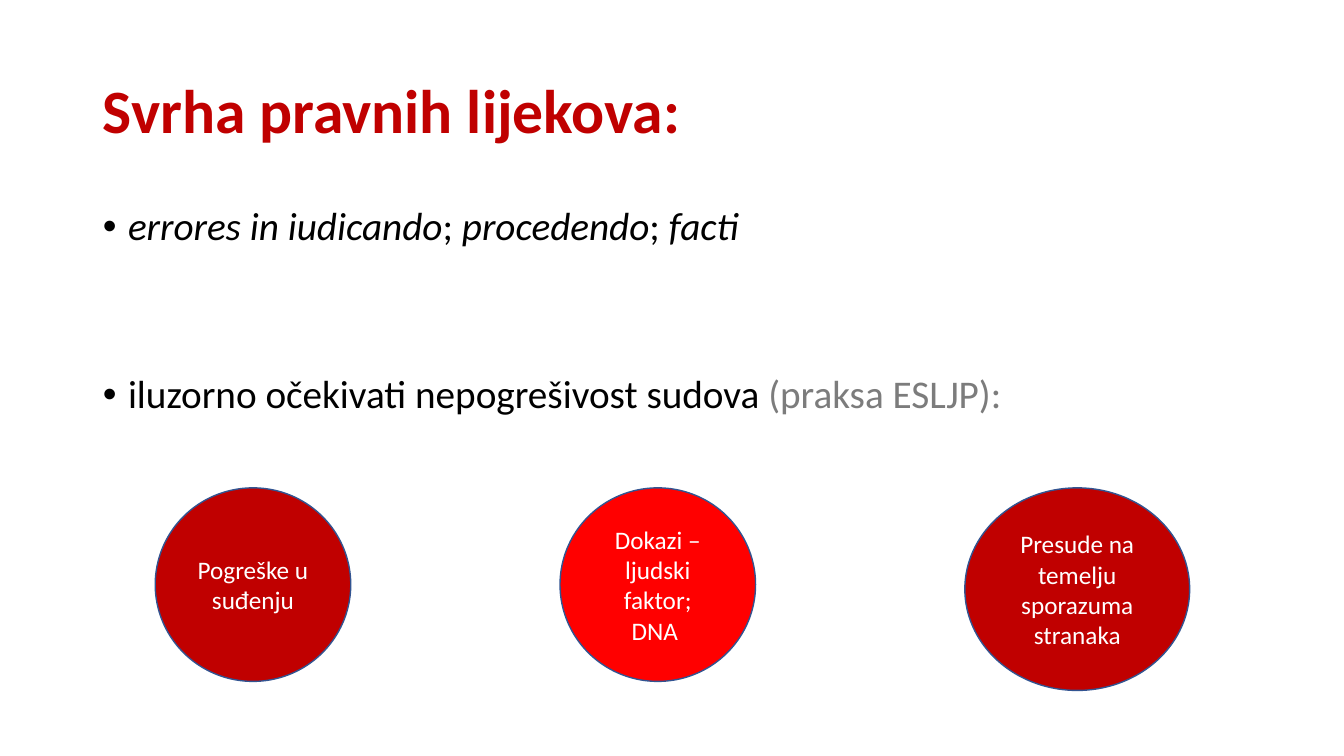
"""Build a slide on the purpose of legal remedies, with three circles of reasons."""
import dataclasses

import lxml.etree
import pptx
import pptx.dml.color
import pptx.enum.shapes
import pptx.enum.text
import pptx.oxml.ns
import pptx.util


@dataclasses.dataclass(frozen=True)
class Theme:
    font: str = "Calibri"
    dark_red: str = "C00000"
    bright_red: str = "FF0000"
    outline: str = "325491"
    black: str = "000000"
    grey: str = "7C7C7C"
    white: str = "FFFFFF"
    title_size: int = 44
    body_size: int = 28
    circle_size: int = 18


@dataclasses.dataclass(frozen=True)
class Area:
    left: float
    top: float
    width: float
    height: float


@dataclasses.dataclass(frozen=True)
class Phrase:
    text: str
    color: str
    italic: bool = False


@dataclasses.dataclass(frozen=True)
class Bullet:
    phrases: tuple[Phrase, ...]
    space_before: int


@dataclasses.dataclass(frozen=True)
class Circle:
    text: str
    fill: str
    width: float
    height: float


THEME = Theme()
SLIDE_WIDTH = pptx.util.Inches(13.33)
SLIDE_HEIGHT = pptx.util.Inches(7.5)

TITLE_AREA = Area(6.9, 5.33, 86.25, 19.33)
BODY_AREA = Area(6.9, 26.67, 86.25, 63.47)
CIRCLE_LEFT, CIRCLE_TOP, CIRCLE_PITCH = 11.55, 64.53, 30.12

BULLETS = (
    Bullet((
        Phrase("errores in iudicando", THEME.black, True),
        Phrase("; ", THEME.black),
        Phrase("procedendo", THEME.black, True),
        Phrase("; ", THEME.black),
        Phrase("facti", THEME.black, True),
    ), 0),
    Bullet((
        Phrase("iluzorno očekivati nepogrešivost sudova ", THEME.black),
        Phrase("(praksa ESLJP):", THEME.grey),
    ), 90),
)

CIRCLES = (
    Circle("Pogreške u suđenju", THEME.dark_red, 14.55, 25.6),
    Circle("Dokazi – ljudski faktor; DNA ", THEME.bright_red, 14.55, 25.6),
    Circle("Presude na temelju sporazuma stranaka", THEME.dark_red, 16.73, 26.8),
)


def rgb(value: str) -> pptx.dml.color.RGBColor:
    return pptx.dml.color.RGBColor.from_string(value)


def place(shape, area: Area) -> None:
    shape.left = round(SLIDE_WIDTH * area.left / 100)
    shape.top = round(SLIDE_HEIGHT * area.top / 100)
    shape.width = round(SLIDE_WIDTH * area.width / 100)
    shape.height = round(SLIDE_HEIGHT * area.height / 100)


def style_run(run, size: int, color: str, bold: bool = False, italic: bool = False) -> None:
    run.font.name = THEME.font
    run.font.size = pptx.util.Pt(size)
    run.font.color.rgb = rgb(color)
    run.font.bold = bold
    run.font.italic = italic


def add_bullet_mark(paragraph) -> None:
    properties = paragraph._p.get_or_add_pPr()
    indent = pptx.util.Inches(0.25)
    properties.set("marL", str(indent))
    properties.set("indent", str(-indent))
    for tag, name, value in (("a:buFont", "typeface", "Arial"), ("a:buChar", "char", "•")):
        mark = lxml.etree.SubElement(properties, pptx.oxml.ns.qn(tag))
        mark.set(name, value)


def fill_title(title) -> None:
    place(title, TITLE_AREA)
    frame = title.text_frame
    frame.text = "Svrha pravnih lijekova:"
    frame.auto_size = pptx.enum.text.MSO_AUTO_SIZE.NONE
    frame.vertical_anchor = pptx.enum.text.MSO_ANCHOR.MIDDLE
    paragraph = frame.paragraphs[0]
    paragraph.alignment = pptx.enum.text.PP_ALIGN.LEFT
    paragraph.line_spacing = 0.9
    style_run(paragraph.runs[0], THEME.title_size, THEME.dark_red, bold=True)


def fill_body(body) -> None:
    place(body, BODY_AREA)
    frame = body.text_frame
    frame.auto_size = pptx.enum.text.MSO_AUTO_SIZE.NONE
    for index, bullet in enumerate(BULLETS):
        paragraph = frame.add_paragraph() if index else frame.paragraphs[0]
        add_bullet_mark(paragraph)
        paragraph.line_spacing = 0.9
        paragraph.space_before = pptx.util.Pt(bullet.space_before)
        for phrase in bullet.phrases:
            run = paragraph.add_run()
            run.text = phrase.text
            style_run(run, THEME.body_size, phrase.color, italic=phrase.italic)


def add_circle(slide, circle: Circle, column: int) -> None:
    shape = slide.shapes.add_shape(pptx.enum.shapes.MSO_SHAPE.OVAL, 0, 0, 0, 0)
    left = CIRCLE_LEFT + column * CIRCLE_PITCH
    place(shape, Area(left, CIRCLE_TOP, circle.width, circle.height))
    shape.shadow.inherit = False
    shape.fill.solid()
    shape.fill.fore_color.rgb = rgb(circle.fill)
    shape.line.color.rgb = rgb(THEME.outline)
    shape.line.width = pptx.util.Pt(1)
    frame = shape.text_frame
    frame.text = circle.text
    frame.word_wrap = True
    frame.vertical_anchor = pptx.enum.text.MSO_ANCHOR.MIDDLE
    paragraph = frame.paragraphs[0]
    paragraph.alignment = pptx.enum.text.PP_ALIGN.CENTER
    style_run(paragraph.runs[0], THEME.circle_size, THEME.white)


def main() -> None:
    presentation = pptx.Presentation()
    presentation.slide_width = SLIDE_WIDTH
    presentation.slide_height = SLIDE_HEIGHT
    slide = presentation.slides.add_slide(presentation.slide_layouts[1])
    fill_title(slide.shapes.title)
    fill_body(slide.placeholders[1])
    for column, circle in enumerate(CIRCLES):
        add_circle(slide, circle, column)
    presentation.save("out.pptx")


if __name__ == "__main__":
    main()
